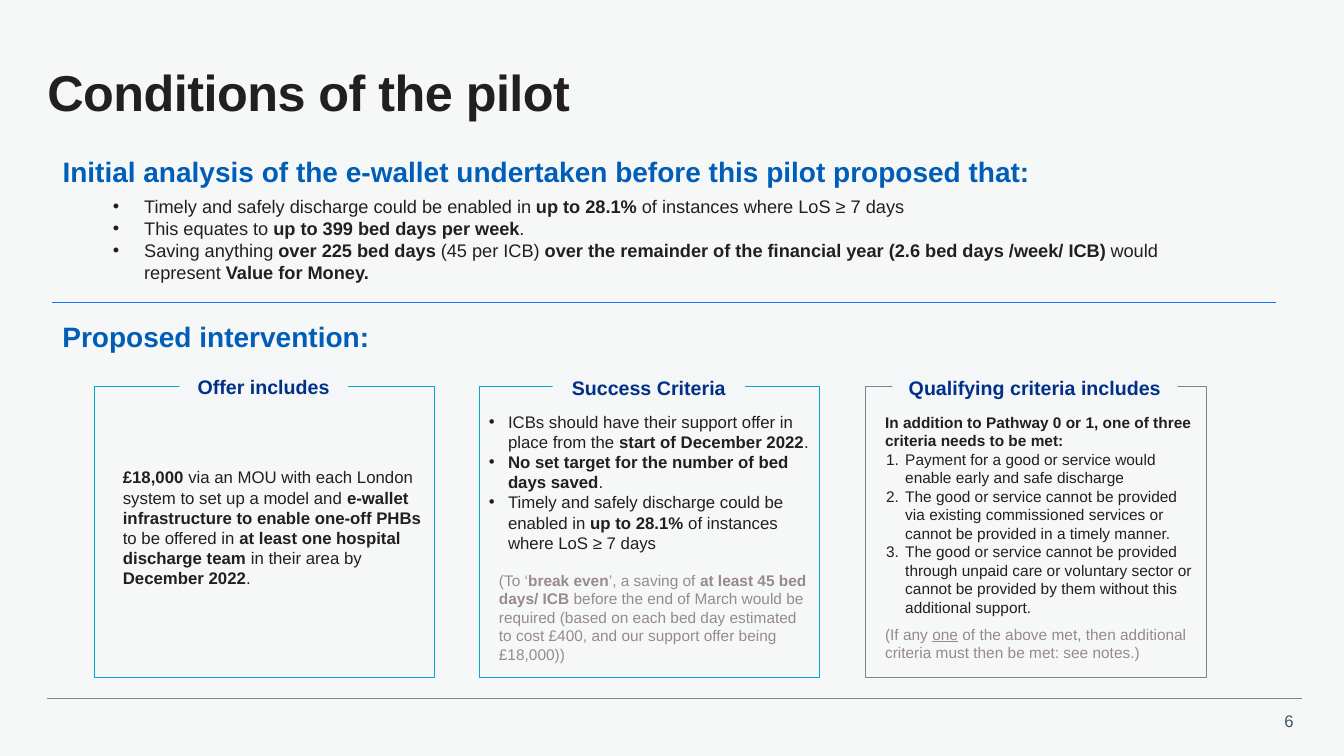
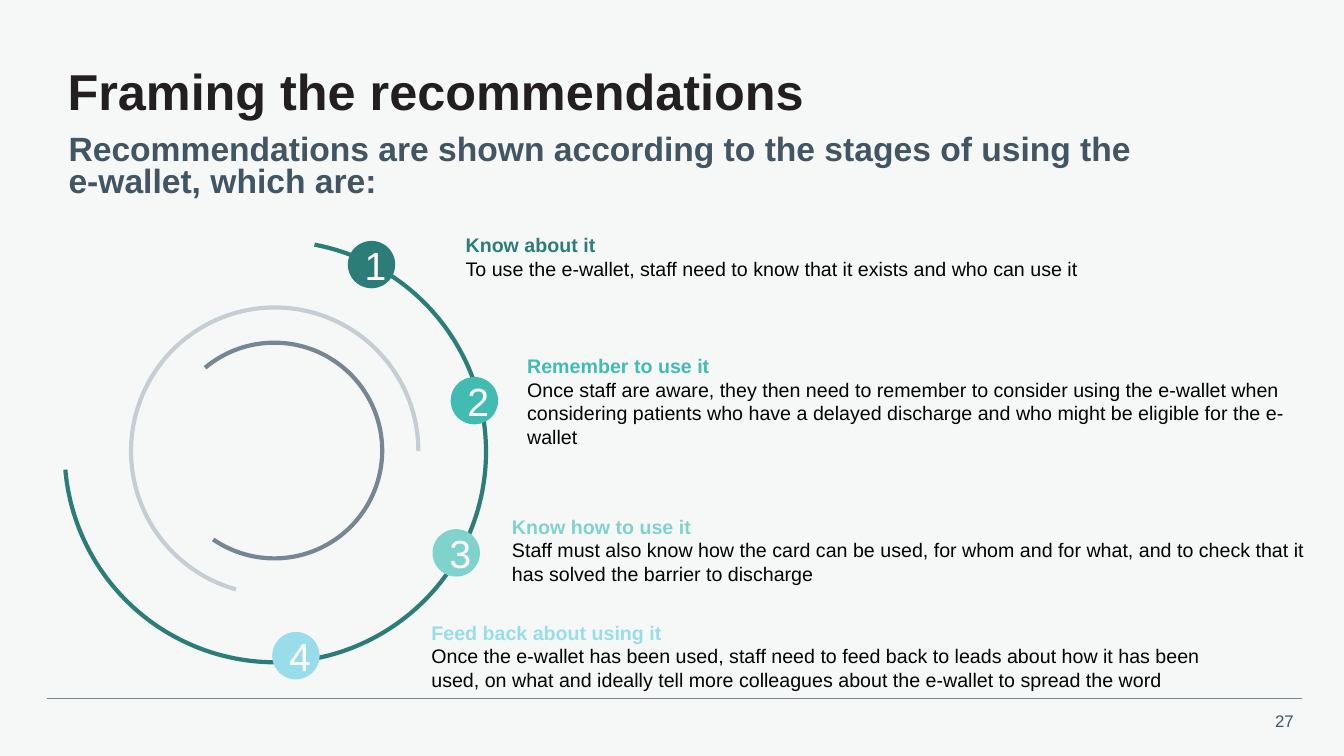
from dataclasses import dataclass

from lxml import etree
from pptx import Presentation
from pptx.dml.color import RGBColor
from pptx.enum import shapes, text
from pptx.oxml.ns import qn
from pptx.util import Pt

PX = 9144  # EMU in one px, 100 px to the inch
LEFT, CENTER, RIGHT = text.PP_ALIGN.LEFT, text.PP_ALIGN.CENTER, text.PP_ALIGN.RIGHT
TOP, MIDDLE = text.MSO_ANCHOR.TOP, text.MSO_ANCHOR.MIDDLE
INSETS = (10, 5, 10, 5)
NO_INSETS = (0, 0, 0, 0)


@dataclass(frozen=True)
class Theme:
    font: str = "Arial"
    # Colours
    page: str = "F6F8F8"
    label_fill: str = "F4F6F8"
    ink: str = "231F20"
    black: str = "000000"
    white: str = "FFFFFF"
    slate: str = "425563"
    rule: str = "768692"
    pale: str = "C7CED3"
    muted: str = "97898D"
    blue: str = "005EB8"
    navy: str = "003087"
    bright: str = "1E6EFF"
    aqua: str = "00A9CE"
    steps: tuple = ("2C7D77", "42BBB2", "80D2CC", "99DDEB")
    # Type sizes
    title: int = 36
    number: int = 28
    subtitle: int = 24
    heading: int = 20
    label: int = 14
    bullets: int = 13
    body: int = 12
    small: int = 11
    # Line widths
    thin: float = 0.5
    hair: float = 0.25
    thick: float = 3


T = Theme()


@dataclass
class Para:
    """A paragraph; **bold** and _underline_ mark up its text."""
    text: str
    size: int = T.body
    color: str = T.ink
    bold: bool = False
    left: int = 0
    hang: int = 0
    bullet: str = ""
    before: float = 0
    spacing: float = 1
    align: int = LEFT
    tracking: int = 0


class Deck:
    def __init__(self):
        self.prs = Presentation()
        self.prs.slide_width, self.prs.slide_height = 1333 * PX, 750 * PX
        fill = self.prs.slide_master.background.fill
        fill.solid()
        fill.fore_color.rgb = RGBColor.from_string(T.page)
        self.slide = None

    def new_slide(self, number, title, box, tracking=0):
        self.slide = self.prs.slides.add_slide(self.prs.slide_layouts[1])
        self.placeholder(0, box, [Para(title, T.title, bold=True, spacing=0.9,
                                       tracking=tracking)], MIDDLE, NO_INSETS)
        self.line(47, 1291, 693, T.rule)
        self.textbox((1252, 700, 41, 30), [Para(number, color=T.slate, align=RIGHT)])

    def place(self, sp, box):
        sp.left, sp.top, sp.width, sp.height = (v * PX for v in box)

    # Text
    def set_text(self, sp, paras, anchor=TOP, insets=INSETS, wrap=True):
        tf = sp.text_frame
        tf.auto_size = text.MSO_AUTO_SIZE.NONE
        tf.word_wrap, tf.vertical_anchor = wrap, anchor
        tf.margin_left, tf.margin_top, tf.margin_right, tf.margin_bottom = (
            v * PX for v in insets)
        for i, para in enumerate(paras):
            self.paragraph(tf.add_paragraph() if i else tf.paragraphs[0], para)

    def paragraph(self, p, para):
        pPr = p._p.get_or_add_pPr()
        pPr.set("marL", str(para.left * PX))
        pPr.set("indent", str(-para.hang * PX))
        if para.bullet == "1.":
            etree.SubElement(pPr, qn("a:buAutoNum"), type="arabicPeriod")
        elif para.bullet:
            etree.SubElement(pPr, qn("a:buFont"), typeface=T.font)
            etree.SubElement(pPr, qn("a:buChar"), char=para.bullet)
        else:
            etree.SubElement(pPr, qn("a:buNone"))
        p.alignment, p.line_spacing = para.align, para.spacing
        p.space_before, p.space_after = Pt(para.before), Pt(0)
        for i, chunk in enumerate(para.text.split("**")):
            for j, piece in enumerate(chunk.split("_")):
                if piece:
                    self.add_run(p, piece, para, para.bold or i % 2 == 1, j % 2 == 1)

    def add_run(self, p, piece, para, bold, underline):
        r = p.add_run()
        r.text = piece
        r.font.name, r.font.size = T.font, Pt(para.size)
        r.font.bold, r.font.underline = bold, underline
        r.font.color.rgb = RGBColor.from_string(para.color)
        if para.tracking:
            r._r.get_or_add_rPr().set("spc", str(para.tracking))

    def placeholder(self, idx, box, paras, anchor=TOP, insets=INSETS):
        sp = self.slide.placeholders[idx]
        self.place(sp, box)
        self.set_text(sp, paras, anchor, insets)

    def textbox(self, box, paras, anchor=TOP):
        sp = self.slide.shapes.add_textbox(*(v * PX for v in box))
        self.set_text(sp, paras, anchor)

    # Shapes
    def shape(self, kind, box, fill=None, line=None, width=T.hair):
        sp = self.slide.shapes.add_shape(kind, *(v * PX for v in box))
        sp.shadow.inherit = False
        if fill:
            sp.fill.solid()
            sp.fill.fore_color.rgb = RGBColor.from_string(fill)
        else:
            sp.fill.background()
        if line:
            sp.line.color.rgb = RGBColor.from_string(line)
            sp.line.width = Pt(width)
        else:
            sp.line.fill.background()
        return sp

    def line(self, x1, x2, y, color):
        ln = self.slide.shapes.add_connector(
            shapes.MSO_CONNECTOR.STRAIGHT, x1 * PX, y * PX, x2 * PX, y * PX)
        ln.line.color.rgb = RGBColor.from_string(color)
        ln.line.width = Pt(T.thin)
        etree.SubElement(ln._element.spPr, qn("a:effectLst"))

    def panel(self, x, color, label, label_size, paras, bottom=5):
        """A framed box whose label sits across the top edge."""
        top, width = 383, 338
        sp = self.shape(shapes.MSO_SHAPE.RECTANGLE, (x, top, width, 289), line=color)
        self.set_text(sp, paras, MIDDLE, (10, 16, 10, bottom))
        w, h = label_size
        sp = self.shape(shapes.MSO_SHAPE.RECTANGLE,
                        (x + (width - w) // 2, top + 1 - h // 2, w, h), T.label_fill)
        self.set_text(sp, [Para(label, T.label, T.navy, True, align=CENTER)],
                      MIDDLE, wrap=False)

    def arc(self, x, y, size, rotation, color):
        sp = self.shape(shapes.MSO_SHAPE.ARC, (x, y, size, size), None, color, T.thick)
        sp.adjustments[0] = 63.376
        sp.rotation = rotation

    def badge(self, x, y, number, color):
        sp = self.shape(shapes.MSO_SHAPE.OVAL, (x, y, 47, 47), color)
        self.set_text(sp, [Para(number, T.number, T.white, align=CENTER)], MIDDLE)


def conditions(deck):
    deck.new_slide("6", "Conditions of the pilot", (47, 47, 1247, 95), tracking=-40)

    # Analysis and its findings
    def heading(words):
        return Para(words, T.heading, T.blue, True, spacing=0.9)

    findings = [
        "Timely and safely discharge could be enabled in **up to 28.1%** of instances where LoS ≥ 7 days",
        "This equates to **up to 399 bed days per week**.",
        "Saving anything **over 225 bed days **(45 per ICB) **over the remainder of the financial year "
        "(2.6 bed days /week/ ICB) **would represent **Value for Money.**",
    ]
    deck.placeholder(1, (52, 152, 1182, 139), [
        heading("Initial analysis of the e-wallet undertaken before this pilot proposed that:"),
        *(Para(words, T.bullets, left=81, hang=31, bullet="•", before=0 if i else 5)
          for i, words in enumerate(findings))])
    deck.line(52, 1266, 300, T.bright)
    deck.textbox((52, 316, 1182, 45), [heading("Proposed intervention:")])

    # Three panels
    offer = [Para(
        "**£18,000 **via an MOU with each London system to set up a model and **e-wallet infrastructure "
        "to enable one-off PHBs **to be offered in **at least one hospital discharge team **in their "
        "area by **December 2022**.", left=19)]
    success = [Para(words, left=19, hang=19, bullet="•") for words in (
        "ICBs should have their support offer in place from the **start of December 2022**.",
        "**No set target for the number of bed days saved**.",
        "Timely and safely discharge could be enabled in **up to 28.1%** of instances where LoS ≥ 7 days",
    )]
    success.append(Para(
        "(To ‘**break even**’, a saving of **at least 45 bed days/ ICB **before the end of March would be "
        "required (based on each bed day estimated to cost £400, and our support offer being £18,000))",
        T.small, T.muted, left=10, before=13))
    qualifying = [
        Para("In addition to Pathway 0 or 1, one of three criteria needs to be met:",
             T.small, bold=True, left=10),
        *(Para(words, T.small, left=30, hang=19, bullet="1.") for words in (
            "Payment for a good or service would enable early and safe discharge",
            "The good or service cannot be provided via existing commissioned services or cannot be "
            "provided in a timely manner.",
            "The good or service cannot be provided through unpaid care or voluntary sector or cannot "
            "be provided by them without this additional support.")),
        Para("(If any _one_ of the above met, then additional criteria must then be met: see notes.)",
             T.small, T.muted, left=10, before=6)]
    panels = [
        (T.aqua, "Offer includes", (167, 46), offer, 24),
        (T.aqua, "Success Criteria", (191, 31), success),
        (T.rule, "Qualifying criteria includes", (283, 31), qualifying),
    ]
    for i, panel in enumerate(panels):
        deck.panel(93 + 765 * i // 2, *panel)


def recommendations(deck):
    deck.new_slide("27", "Framing the recommendations", (67, 60, 958, 67))
    deck.placeholder(1, (68, 133, 1214, 67), [
        Para(words, T.subtitle, T.slate, True, spacing=0.8) for words in (
            "Recommendations are shown according to the stages of using the",
            "e-wallet, which are:")], MIDDLE, NO_INSETS)

    # Concentric arcs
    for x, y, size, rotation, color in (
            (130, 305, 285, 0, T.pale),
            (165, 340, 214, 124.5, T.rule),
            (64, 239, 418, 175.1, T.steps[0])):
        deck.arc(x, y, size, rotation, color)

    # Numbered stages: badge position, text box, heading, detail
    stages = [
        ((345, 239), (452, 226, 774, 57), "Know about it",
         "To use the e-wallet, staff need to know that it exists and who can use it"),
        ((447, 374), (513, 346, 774, 104), "Remember to use it",
         "Once staff are aware, they then need to remember to consider using the e-wallet when considering "
         "patients who have a delayed discharge and who might be eligible for the e-wallet"),
        ((429, 525), (498, 505, 827, 81), "Know how to use it",
         "Staff must also know how the card can be used, for whom and for what, and to check that it has "
         "solved the barrier to discharge"),
        ((270, 627), (418, 610, 835, 81), "Feed back about using it",
         "Once the e-wallet has been used, staff need to feed back to leads about how it has been used, "
         "on what and ideally tell more colleagues about the e-wallet to spread the word"),
    ]
    for i, (spot, box, name, detail) in enumerate(stages):
        deck.badge(*spot, str(i + 1), T.steps[i])
        deck.textbox(box, [Para(name, T.label, T.steps[i], True),
                           Para(detail, T.label, T.black)], MIDDLE)


def main():
    deck = Deck()
    conditions(deck)
    recommendations(deck)
    deck.prs.save("out.pptx")


if __name__ == "__main__":
    main()
